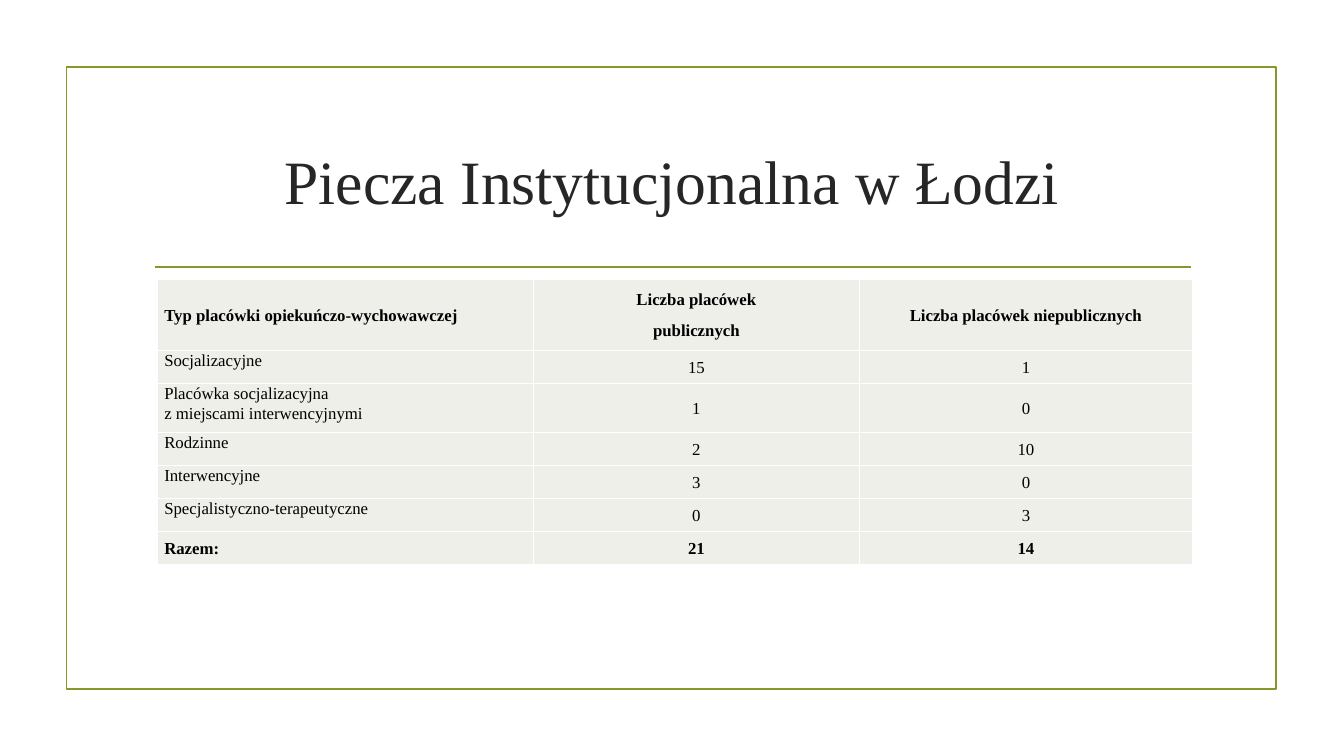
import pptx
import pptx.dml.color
import pptx.enum.shapes
import pptx.enum.text
import pptx.util
from lxml import etree
from pptx.oxml.ns import qn

ALIGN = pptx.enum.text.PP_ALIGN
ANCHOR = pptx.enum.text.MSO_ANCHOR


def color(value):
    return pptx.dml.color.RGBColor.from_string(value)


class SlideBuilder:
    """Draw styled elements on one slide, with lengths in percent of its size."""

    font_name = "Times New Roman"
    accent = "83992A"
    title_color = "262626"
    body_color = "000000"
    cell_fill = "EDEFE8"
    border_color = "FFFFFF"
    rule_width = 1.25

    def __init__(self, presentation):
        self.width = presentation.slide_width
        self.height = presentation.slide_height
        self.slide = presentation.slides.add_slide(presentation.slide_layouts[6])

    def x(self, percent):
        return round(self.width * percent / 100)

    def y(self, percent):
        return round(self.height * percent / 100)

    def box(self, left, top, width, height):
        return self.x(left), self.y(top), self.x(width), self.y(height)

    def style_line(self, line):
        line.color.rgb = color(self.accent)
        line.width = pptx.util.Pt(self.rule_width)

    def style_text(self, paragraph, size, text_color, align, bold=False):
        paragraph.alignment = align
        paragraph.font.name = self.font_name
        paragraph.font.size = pptx.util.Pt(size)
        paragraph.font.bold = bold
        paragraph.font.color.rgb = color(text_color)

    def frame(self, *place):
        shape = self.slide.shapes.add_shape(
            pptx.enum.shapes.MSO_SHAPE.RECTANGLE, *self.box(*place))
        shape.shadow.inherit = False
        shape.fill.background()
        self.style_line(shape.line)

    def rule(self, left, right, top):
        connector = self.slide.shapes.add_connector(
            pptx.enum.shapes.MSO_CONNECTOR.STRAIGHT,
            self.x(left), self.y(top), self.x(right), self.y(top))
        self.style_line(connector.line)
        etree.SubElement(connector._element.spPr, qn("a:effectLst"))

    def title(self, text, *place):
        text_frame = self.slide.shapes.add_textbox(*self.box(*place)).text_frame
        text_frame.word_wrap = True
        text_frame.vertical_anchor = ANCHOR.MIDDLE
        text_frame.text = text
        self.style_text(text_frame.paragraphs[0], 44, self.title_color, ALIGN.CENTER)

    def cell_borders(self, cell):
        properties = cell._tc.get_or_add_tcPr()
        for position, side in enumerate(("a:lnL", "a:lnR", "a:lnT", "a:lnB")):
            border = etree.Element(qn(side), w=str(pptx.util.Pt(1)))
            fill = etree.SubElement(border, qn("a:solidFill"))
            etree.SubElement(fill, qn("a:srgbClr"), val=self.border_color)
            properties.insert(position, border)

    def cell(self, cell, text, align, anchor, bold, space_after):
        cell.fill.solid()
        cell.fill.fore_color.rgb = color(self.cell_fill)
        self.cell_borders(cell)
        cell.margin_left = cell.margin_right = pptx.util.Inches(0.07)
        cell.margin_top = cell.margin_bottom = 0
        cell.vertical_anchor = anchor
        cell.text = text
        for paragraph in cell.text_frame.paragraphs:
            self.style_text(paragraph, 12, self.body_color, align, bold)
            paragraph.line_spacing = 1.07
            paragraph.space_after = pptx.util.Pt(space_after)

    def table(self, left, top, columns, rows, records):
        place = self.box(left, top, sum(columns), sum(rows))
        table = self.slide.shapes.add_table(len(rows), len(columns), *place).table
        for column, width in zip(table.columns, columns):
            column.width = self.x(width)
        for row, height in zip(table.rows, rows):
            row.height = self.y(height)
        last = len(records) - 1
        for row_index, record in enumerate(records):
            emphasized = row_index in (0, last)
            for column_index, text in enumerate(record):
                is_label = column_index == 0
                self.cell(
                    table.cell(row_index, column_index), text,
                    align=ALIGN.LEFT if is_label else ALIGN.CENTER,
                    anchor=ANCHOR.TOP if is_label and not emphasized else ANCHOR.MIDDLE,
                    bold=emphasized,
                    space_after=8 if row_index == 0 else 0)


def main():
    presentation = pptx.Presentation()
    presentation.slide_width = pptx.util.Inches(13.33)
    presentation.slide_height = pptx.util.Inches(7.5)

    builder = SlideBuilder(presentation)
    builder.frame(4.95, 8.9, 90, 82.3)
    builder.rule(11.5, 88.6, 35.3)
    builder.title("Piecza Instytucjonalna w Łodzi", 10.65, 14.25, 78.75, 19.05)

    row = 4.37
    builder.table(
        11.7, 36.95,
        columns=[27.97, 24.3, 24.75],
        rows=[9.4, row, 6.5, row, row, row, row],
        records=[
            ("Typ placówki opiekuńczo-wychowawczej", "Liczba placówek\npublicznych",
             "Liczba placówek niepublicznych"),
            ("Socjalizacyjne", "15", "1"),
            ("Placówka socjalizacyjna\vz miejscami interwencyjnymi", "1", "0"),
            ("Rodzinne", "2", "10"),
            ("Interwencyjne", "3", "0"),
            ("Specjalistyczno-terapeutyczne", "0", "3"),
            ("Razem:", "21", "14"),
        ])
    presentation.save("out.pptx")


if __name__ == "__main__":
    main()
